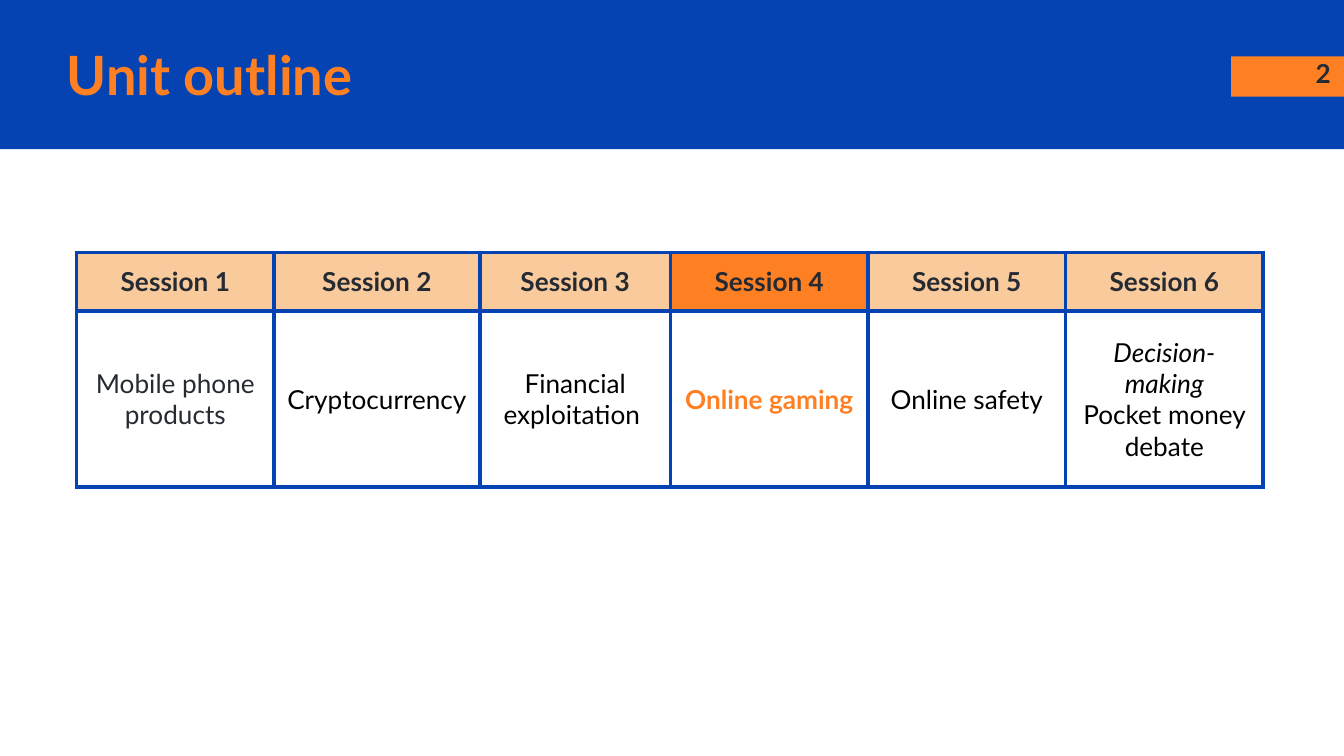
from lxml.etree import SubElement
from pptx import Presentation
from pptx.dml.color import RGBColor
from pptx.enum.shapes import MSO_SHAPE
from pptx.enum.text import MSO_ANCHOR, PP_ALIGN
from pptx.oxml.ns import qn
from pptx.util import Inches, Pt

BLUE = RGBColor(0x05, 0x43, 0xB3)
ORANGE = RGBColor(0xFF, 0x80, 0x22)
PEACH = RGBColor(0xF9, 0xCB, 0x9C)
DARK = RGBColor(0x26, 0x2A, 0x33)
BLACK = RGBColor(0, 0, 0)
CURRENT_SESSION = 4
SESSIONS = [
    "Mobile phone products",
    "Cryptocurrency",
    "Financial exploitation ",
    "Online gaming",
    "Online safety",
    "Decision-\nmaking\nPocket money debate",
]
COLUMN_WIDTHS = [1.47, 1.53, 1.42, 1.47, 1.47, 1.47]
ROW_HEIGHTS = [0.43, 1.31]


class SlideBuilder:
    font = "Lato"
    border_width = Pt(2.25)

    def __init__(self, slide):
        self.slide = slide

    def bar(self, left, top, width, height, color):
        shape = self.slide.shapes.add_shape(
            MSO_SHAPE.RECTANGLE, Inches(left), Inches(top), Inches(width), Inches(height))
        shape.shadow.inherit = False
        shape.fill.solid()
        shape.fill.fore_color.rgb = color
        shape.line.fill.background()

    def style_text(self, frame, size, color, bold, align):
        for paragraph in frame.paragraphs:
            paragraph.alignment = align
            for span in paragraph.runs:
                span.font.name = self.font
                span.font.size = Pt(size)
                span.font.bold = bold
                span.font.color.rgb = color

    def set_margins(self, target, margin):
        target.margin_left = target.margin_right = Inches(margin)
        target.margin_top = target.margin_bottom = Inches(margin)

    def text(self, left, top, width, height, words, size, color, align, anchor):
        box = self.slide.shapes.add_textbox(
            Inches(left), Inches(top), Inches(width), Inches(height))
        frame = box.text_frame
        frame.word_wrap = True
        frame.vertical_anchor = anchor
        self.set_margins(frame, 0.1)
        frame.text = words
        self.style_text(frame, size, color, True, align)

    def border(self, cell):
        properties = cell._tc.get_or_add_tcPr()
        for index, side in enumerate(("a:lnL", "a:lnR", "a:lnT", "a:lnB")):
            line = properties.makeelement(qn(side), {"w": str(self.border_width)})
            fill = SubElement(line, qn("a:solidFill"))
            SubElement(fill, qn("a:srgbClr"), val=str(BLUE))
            properties.insert(index, line)

    def cell(self, cell, words, color, bold, margin, fill=None):
        cell.text_frame.text = words
        self.style_text(cell.text_frame, 14, color, bold, PP_ALIGN.CENTER)
        cell.vertical_anchor = MSO_ANCHOR.MIDDLE
        self.set_margins(cell, margin)
        if fill is None:
            cell.fill.background()
        else:
            cell.fill.solid()
            cell.fill.fore_color.rgb = fill
        self.border(cell)

    def session_table(self, left, top):
        table = self.slide.shapes.add_table(
            len(ROW_HEIGHTS), len(COLUMN_WIDTHS), Inches(left), Inches(top),
            Inches(sum(COLUMN_WIDTHS)), Inches(sum(ROW_HEIGHTS))).table
        table.first_row = table.horz_banding = False
        for column, width in zip(table.columns, COLUMN_WIDTHS):
            column.width = Inches(width)
        for row, height in zip(table.rows, ROW_HEIGHTS):
            row.height = Inches(height)
        for index, topic in enumerate(SESSIONS):
            number = index + 1
            current = number == CURRENT_SESSION
            self.cell(table.cell(0, index), f"Session {number}", DARK, True, 0.1,
                      ORANGE if current else PEACH)
            color = ORANGE if current else DARK if number == 1 else BLACK
            self.cell(table.cell(1, index), topic, color, current, 0.07)
        for paragraph in table.cell(1, len(SESSIONS) - 1).text_frame.paragraphs[:2]:
            paragraph.runs[0].font.italic = True


def main():
    deck = Presentation()
    deck.slide_width = Inches(10)
    deck.slide_height = deck.slide_width * 9 // 16
    page = SlideBuilder(deck.slides.add_slide(deck.slide_layouts[6]))
    page.bar(0, 0, 10, 1.11, BLUE)
    page.bar(9.16, 0.42, 0.84, 0.3, ORANGE)
    page.text(9.4, 0.33, 0.6, 0.43, "2", 14, DARK, PP_ALIGN.RIGHT, MSO_ANCHOR.TOP)
    page.text(0.4, 0.27, 8.46, 0.56, "Unit outline", 29, ORANGE,
              PP_ALIGN.LEFT, MSO_ANCHOR.MIDDLE)
    page.session_table(0.57, 1.88)
    deck.save("out.pptx")


if __name__ == "__main__":
    main()
